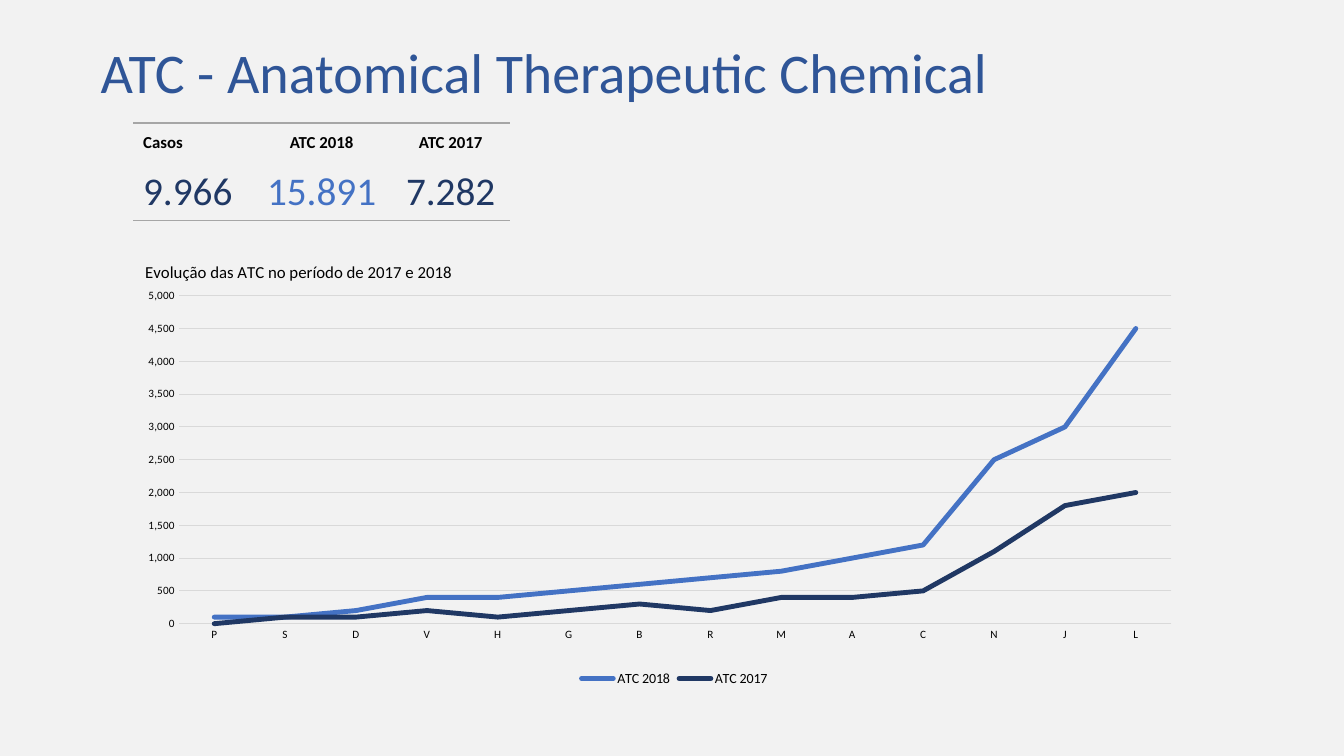
from dataclasses import dataclass

from lxml import etree
from pptx import Presentation
from pptx import util as u
from pptx.chart import data
from pptx.dml.color import RGBColor
from pptx.enum import chart as ch, text
from pptx.oxml import parse_xml
from pptx.oxml.ns import nsdecls, qn

PX = 9144  # 100 px to the inch


@dataclass(frozen=True)
class Theme:
    font: str = "Calibri"
    back: str = "F2F2F2"
    head: str = "2F5597"
    ink: str = "000000"
    blue: str = "4472C4"
    navy: str = "203864"
    rule: str = "A6A6A6"
    grid: str = "D9D9D9"
    title: int = 40
    figure: int = 28
    label: int = 12
    legend: int = 10
    tick: int = 8


T = Theme()
PLAIN = "{2D5ABB26-0587-4C30-8999-92F81FD0307C}"
CASES = [("Casos", "9.966", T.navy), ("ATC 2018", "15.891", T.blue),
         ("ATC 2017", "7.282", T.navy)]
GROUPS = "PSDVHGBRMACNJL"
LINES = [
    ("ATC 2018", T.blue, [100, 100, 200, 400, 400, 500, 600, 700, 800, 1000,
                          1200, 2500, 3000, 4500]),
    ("ATC 2017", T.navy, [0, 100, 100, 200, 100, 200, 300, 200, 400, 400,
                          500, 1100, 1800, 2000]),
]


def px(*nums):
    return [u.Emu(n * PX) for n in nums]


def rgb(code):
    return RGBColor.from_string(code)


def style(font, size, color, bold=False):
    font.name, font.size, font.bold = T.font, u.Pt(size), bold
    font.color.rgb = rgb(color)


def heading(slide, box):
    frame = slide.shapes.add_textbox(*px(*box)).text_frame
    frame.word_wrap = True
    par = frame.paragraphs[0]
    par.text = "ATC - Anatomical Therapeutic Chemical"
    par.line_spacing = 0.9
    style(par.font, T.title, T.head)


def border(cell, side):
    cell._tc.get_or_add_tcPr().insert(0, parse_xml(
        f'<a:{side} {nsdecls("a")} w="12700"><a:solidFill>'
        f'<a:srgbClr val="{T.rule}"/></a:solidFill></a:{side}>'))


def summary(slide, box):
    shape = slide.shapes.add_table(2, len(CASES), *px(*box))
    table = shape.table
    table.first_row = table.horz_banding = False
    table._tbl.tblPr.find(qn("a:tableStyleId")).text = PLAIN
    for col, wide in zip(table.columns, px(118, 138, 118)):
        col.width = wide
    for row, high in zip(table.rows, px(40, 56)):
        row.height = high
    for c, (name, count, color) in enumerate(CASES):
        top, low = table.cell(0, c), table.cell(1, c)
        for cell, words in ((top, name), (low, count)):
            cell.text = words
            cell.fill.background()
            if c:
                cell.text_frame.paragraphs[0].alignment = text.PP_ALIGN.CENTER
        top.vertical_anchor = text.MSO_ANCHOR.MIDDLE
        style(top.text_frame.paragraphs[0].font, T.label, T.ink, True)
        style(low.text_frame.paragraphs[0].font, T.figure, color)
        border(top, "lnT")
        border(low, "lnB")


def layout(owner, after, **parts):
    """Place a chart part by fractions of the chart area."""
    for old in owner.findall(qn("c:layout")):
        owner.remove(old)
    node = parse_xml(f'<c:layout {nsdecls("c")}><c:manualLayout/></c:layout>')
    for name, val in parts.items():
        etree.SubElement(node[0], qn(f"c:{name}")).set("val", str(val))
    if after is None:
        owner.insert(0, node)
    else:
        after.addnext(node)


def trend(slide, box):
    info = data.CategoryChartData(number_format="#,##0")
    info.categories = list(GROUPS)
    for name, _, vals in LINES:
        info.add_series(name, vals)
    chart = slide.shapes.add_chart(
        ch.XL_CHART_TYPE.LINE, *px(*box), info).chart
    style(chart.font, T.legend, T.ink)

    # Title and plot placement
    frame = chart.chart_title.text_frame
    frame.text = "Evolução das ATC no período de 2017 e 2018"
    style(frame.paragraphs[0].font, T.label, T.ink)
    title = chart.chart_title._element
    layout(title, title.find(qn("c:tx")), xMode="edge", yMode="edge",
           x=0.02, y=0.04)
    layout(chart._chartSpace.chart.plotArea, None, layoutTarget="inner",
           xMode="edge", yMode="edge", x=0.053, y=0.124, w=0.895, h=0.728)

    # Axes
    for axis in (chart.category_axis, chart.value_axis):
        axis.major_tick_mark = axis.minor_tick_mark = ch.XL_TICK_MARK.NONE
        axis.format.line.fill.background()
        style(axis.tick_labels.font, T.tick, T.ink,
              axis is chart.category_axis)
    axis = chart.value_axis
    axis.minimum_scale, axis.maximum_scale, axis.major_unit = 0, 5000, 500
    axis.tick_labels.number_format = "#,##0"
    axis.tick_labels.number_format_is_linked = False
    grid = axis.major_gridlines.format.line
    grid.color.rgb, grid.width = rgb(T.grid), u.Pt(0.75)

    # Lines
    chart.plots[0].vary_by_categories = False
    for series, (_, color, _) in zip(chart.plots[0].series, LINES):
        series.smooth = False
        series.marker.style = ch.XL_MARKER_STYLE.NONE
        line = series.format.line
        line.color.rgb, line.width = rgb(color), u.Pt(3.5)
        line._get_or_add_ln().set("cap", "rnd")

    # Legend
    chart.has_legend = True
    chart.legend.position = ch.XL_LEGEND_POSITION.BOTTOM
    chart.legend.include_in_layout = False
    style(chart.legend.font, T.legend, T.ink)


def main():
    deck = Presentation()
    deck.slide_width, deck.slide_height = px(1333, 750)
    slide = deck.slides.add_slide(deck.slide_layouts[6])
    slide.background.fill.solid()
    slide.background.fill.fore_color.rgb = rgb(T.back)
    trend(slide, (119, 238, 1100, 447))
    heading(slide, (90, 40, 901, 63))
    summary(slide, (132, 122, 374, 96))
    deck.save("out.pptx")


if __name__ == "__main__":
    main()
